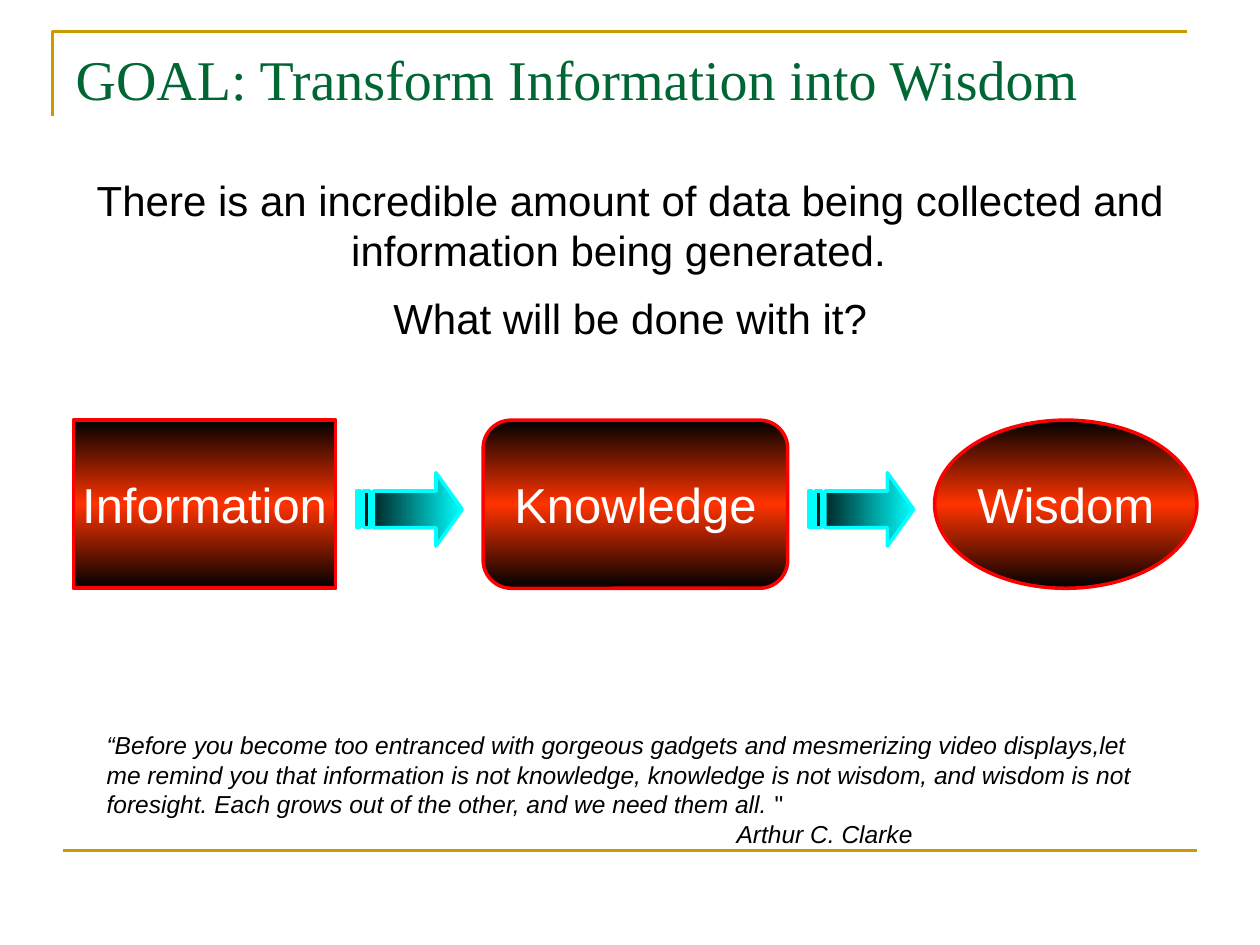
from copy import deepcopy

from lxml import etree
from pptx import Presentation
from pptx.dml.color import RGBColor
from pptx.enum.shapes import MSO_CONNECTOR, MSO_SHAPE
from pptx.enum.text import MSO_ANCHOR, MSO_AUTO_SIZE, PP_ALIGN
from pptx.oxml.ns import qn
from pptx.util import Cm, Pt

GOLD = RGBColor(0xCC, 0x99, 0x00)
GREEN = RGBColor(0x00, 0x66, 0x33)
BLACK = RGBColor(0x00, 0x00, 0x00)
WHITE = RGBColor(0xFF, 0xFF, 0xFF)
RED = RGBColor(0xFF, 0x00, 0x00)
FLAME = RGBColor(0xFF, 0x33, 0x00)
CYAN = RGBColor(0x00, 0xFF, 0xFF)

LEFT, CENTER = PP_ALIGN.LEFT, PP_ALIGN.CENTER
TOP, MIDDLE = MSO_ANCHOR.TOP, MSO_ANCHOR.MIDDLE
NO_FIT = MSO_AUTO_SIZE.NONE
STRAIGHT = MSO_CONNECTOR.STRAIGHT
TITLE_ONLY = 5

# Striped arrow, in cm from its top left corner
SHAFT_TOP, SHAFT_BOTTOM = 0.37, 1.11
HEAD_LEFT, ARROW_WIDTH, ARROW_HEIGHT = 1.59, 2.12, 1.48
STRIPES = [(0.13, 0.26), (0, 0.07)]
ARROW_OUTLINES = [
    [(HEAD_LEFT, 0), (HEAD_LEFT, SHAFT_TOP), (0.33, SHAFT_TOP),
     (0.33, SHAFT_BOTTOM), (HEAD_LEFT, SHAFT_BOTTOM),
     (HEAD_LEFT, ARROW_HEIGHT), (ARROW_WIDTH, ARROW_HEIGHT / 2)],
] + [
    [(start, SHAFT_TOP), (start, SHAFT_BOTTOM), (end, SHAFT_BOTTOM), (end, SHAFT_TOP)]
    for start, end in STRIPES
]


class SlideBuilder:
    sans = "Arial"
    serif = "Times New Roman"
    outline = Pt(2)
    rule = Pt(1.5)

    def __init__(self, slide):
        self.slide = slide
        self.shapes = slide.shapes

    def add_span(self, para, text, size, color, font=sans, italic=False):
        span = para.add_run()
        span.text = text
        span.font.name = font
        span.font.size = Pt(size)
        span.font.italic = italic
        span.font.color.rgb = color

    def set_gradient(self, shape, angle, colors):
        shape.fill.gradient()
        shape.fill.gradient_angle = angle
        stop_list = shape.fill._xPr.find(".//" + qn("a:gsLst"))
        while len(stop_list) < len(colors):
            stop_list.append(deepcopy(stop_list[-1]))
        for index, (stop, color) in enumerate(zip(shape.fill.gradient_stops, colors)):
            stop.color.rgb = color
            stop.position = index / (len(colors) - 1)

    def set_line(self, shape, color, width):
        shape.line.color.rgb = color
        shape.line.width = width

    def title(self, text, left, top, width, height):
        box = self.shapes.title
        box.left, box.top, box.width, box.height = Cm(left), Cm(top), Cm(width), Cm(height)
        frame = box.text_frame
        frame.auto_size = NO_FIT
        frame.vertical_anchor = TOP
        para = frame.paragraphs[0]
        para.alignment = LEFT
        self.add_span(para, text, 32, GREEN, self.serif)

    def text_box(self, left, top, width, height, align, para_count=1):
        box = self.shapes.add_textbox(Cm(left), Cm(top), Cm(width), Cm(height))
        frame = box.text_frame
        frame.word_wrap = True
        for _ in range(para_count - 1):
            frame.add_paragraph()
        for para in frame.paragraphs:
            para.alignment = align
            para.space_before = para.space_after = Pt(5)
        return frame.paragraphs

    def stage(self, kind, text, left, width):
        shape = self.shapes.add_shape(kind, Cm(left), Cm(8.47), Cm(width), Cm(3.39))
        shape.shadow.inherit = False
        self.set_gradient(shape, 90, [BLACK, FLAME, BLACK])
        self.set_line(shape, RED, self.outline)
        frame = shape.text_frame
        frame.word_wrap = False
        frame.vertical_anchor = MIDDLE
        para = frame.paragraphs[0]
        para.alignment = CENTER
        self.add_span(para, text, 28, WHITE)

    def outline_shape(self, outlines, left, top, close):
        points = [[(Cm(left + x), Cm(top + y)) for x, y in outline] for outline in outlines]
        builder = self.shapes.build_freeform(*points[0][0])
        builder.add_line_segments(points[0][1:], close=close)
        for outline in points[1:]:
            builder.move_to(*outline[0])
            builder.add_line_segments(outline[1:], close=close)
        shape = builder.convert_to_shape()
        shape.shadow.inherit = False
        return shape

    def striped_arrow(self, left):
        arrow = self.outline_shape(ARROW_OUTLINES, left, 9.53, True)
        self.set_gradient(arrow, 0, [BLACK, CYAN])
        self.set_line(arrow, CYAN, self.outline)

    def corner(self, left, top, width, height):
        corner = self.outline_shape([[(0, height), (0, 0), (width, 0)]], left, top, False)
        corner.fill.background()
        self.set_line(corner, GOLD, self.rule)

    def level_line(self, left, right, y):
        line = self.shapes.add_connector(STRAIGHT, Cm(left), Cm(y), Cm(right), Cm(y))
        self.set_line(line, GOLD, self.rule)
        etree.SubElement(line._element.spPr, qn("a:effectLst"))

    def tab_stop(self, para, position):
        tabs = etree.SubElement(para._p.get_or_add_pPr(), qn("a:tabLst"))
        etree.SubElement(tabs, qn("a:tab"), pos=str(Cm(position)), algn="l")


def main():
    deck = Presentation()
    deck.slide_width, deck.slide_height = Cm(25.4), Cm(19.05)
    page = SlideBuilder(deck.slides.add_slide(deck.slide_layouts[TITLE_ONLY]))

    # Gold rules and title
    page.corner(1.06, 0.64, 22.86, 1.69)
    page.level_line(1.27, 24.13, 17.15)
    page.title("GOAL: Transform Information into Wisdom", 1.27, 0.76, 22.86, 3.18)

    # Three stages joined by arrows
    page.stage(MSO_SHAPE.RECTANGLE, "Information", 1.48, 5.29)
    page.stage(MSO_SHAPE.ROUNDED_RECTANGLE, "Knowledge", 9.74, 6.14)
    page.stage(MSO_SHAPE.OVAL, "Wisdom", 18.84, 5.29)
    for left in (7.2, 16.3):
        page.striped_arrow(left)

    # Quotation
    quote = page.text_box(1.9, 14.6, 21.38, 2.62, LEFT)[0]
    page.tab_stop(quote, 12.7)
    page.add_span(
        quote,
        "“Before you become too entranced with gorgeous gadgets and mesmerizing "
        "video displays,let me remind you that information is not knowledge, "
        "knowledge is not wisdom, and wisdom is not foresight. Each grows out of "
        "the other, and we need them all. ",
        14, BLACK, italic=True)
    page.add_span(quote, '"', 14, BLACK)
    quote.add_line_break()
    page.add_span(quote, "\t", 14, BLACK)
    page.add_span(quote, "Arthur C. Clarke", 14, BLACK, italic=True)

    # Opening question
    lines = [
        "There is an incredible amount of data being collected and "
        "information being generated.  ",
        "What will be done with it?",
    ]
    paras = page.text_box(0.85, 3.39, 23.71, 3.68, CENTER, len(lines))
    for para, text in zip(paras, lines):
        page.add_span(para, text, 24, BLACK)

    deck.save("out.pptx")


if __name__ == "__main__":
    main()
